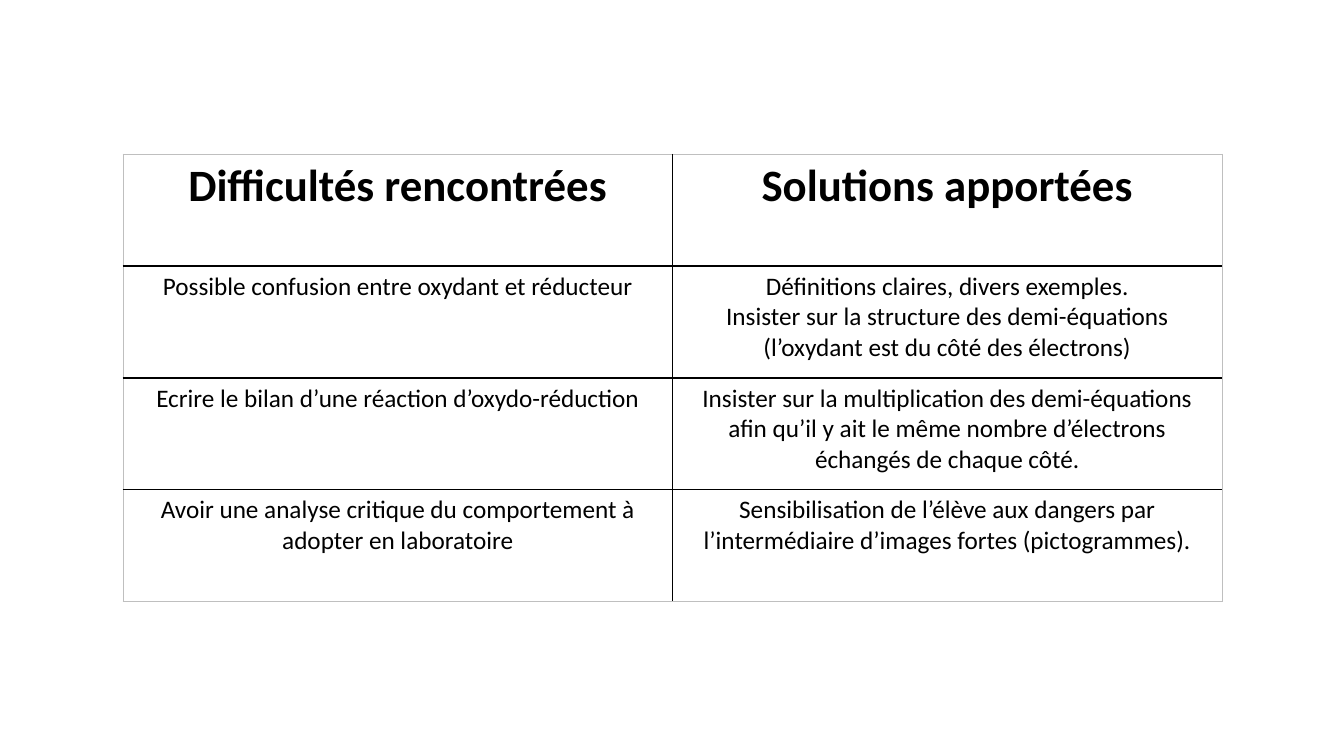
from lxml import etree
from pptx import Presentation
from pptx.dml.color import RGBColor
from pptx.enum import text
from pptx.oxml import ns
from pptx.util import Inches, Pt

COLORS = {"ink": "000000", "paper": "FFFFFF", "frame": "BFBFBF"}
FONT = "Calibri"
LEFT, TOP, COL_W, ROW_H = 1.22, 1.53, 5.45, 1.11
ROWS = [
    ("Difficultés rencontrées", "Solutions apportées"),
    ("Possible confusion entre oxydant et réducteur",
     "Définitions claires, divers exemples.\n"
     "Insister sur la structure des demi-équations (l’oxydant est du côté des électrons)"),
    ("Ecrire le bilan d’une réaction d’oxydo-réduction",
     "Insister sur la multiplication des demi-équations afin qu’il y ait "
     "le même nombre d’électrons échangés de chaque côté."),
    ("Avoir une analyse critique du comportement à adopter en laboratoire",
     "Sensibilisation de l’élève aux dangers par l’intermédiaire "
     "d’images fortes (pictogrammes)."),
]


def add_border(cell, side, color, width):
    """Draw one side of a cell as a solid line."""
    tc_pr = cell._tc.get_or_add_tcPr()
    ln = etree.SubElement(tc_pr, ns.qn(f"a:ln{side}"), w=str(Pt(width)))
    fill = etree.SubElement(ln, ns.qn("a:solidFill"))
    etree.SubElement(fill, ns.qn("a:srgbClr"), val=color)


def style_cell(cell, outer_sides):
    """Give a cell its borders and fill, with a light line on the outer sides."""
    for side in "LRTB":
        if side in outer_sides:
            add_border(cell, side, COLORS["frame"], 0.5)
        else:
            add_border(cell, side, COLORS["ink"], 1)
    cell.fill.solid()
    cell.fill.fore_color.rgb = RGBColor.from_string(COLORS["paper"])


def write_cell(cell, words, size, bold):
    """Write centred text in a cell, one paragraph per line."""
    cell.text = words
    for p in cell.text_frame.paragraphs:
        p.alignment = text.PP_ALIGN.CENTER
        p.font.name = FONT
        p.font.size = Pt(size)
        p.font.bold = bold
        p.font.color.rgb = RGBColor.from_string(COLORS["ink"])


def add_grid(slide, rows):
    """Add the table of difficulties and solutions."""
    n_rows, n_cols = len(rows), len(rows[0])
    table = slide.shapes.add_table(
        n_rows, n_cols, Inches(LEFT), Inches(TOP),
        Inches(n_cols * COL_W), Inches(n_rows * ROW_H)).table
    table.first_row = table.horz_banding = False
    for i, row in enumerate(rows):
        for j, words in enumerate(row):
            cell = table.cell(i, j)
            edges = {"L": j == 0, "R": j == n_cols - 1,
                     "T": i == 0, "B": i == n_rows - 1}
            style_cell(cell, [side for side, outer in edges.items() if outer])
            write_cell(cell, words, 32 if i == 0 else 18, i == 0)


def main():
    """Build and save the slide."""
    prs = Presentation()
    prs.slide_width, prs.slide_height = Inches(13.33), Inches(7.5)
    slide = prs.slides.add_slide(prs.slide_layouts[6])
    add_grid(slide, ROWS)
    prs.save("out.pptx")


if __name__ == "__main__":
    main()
